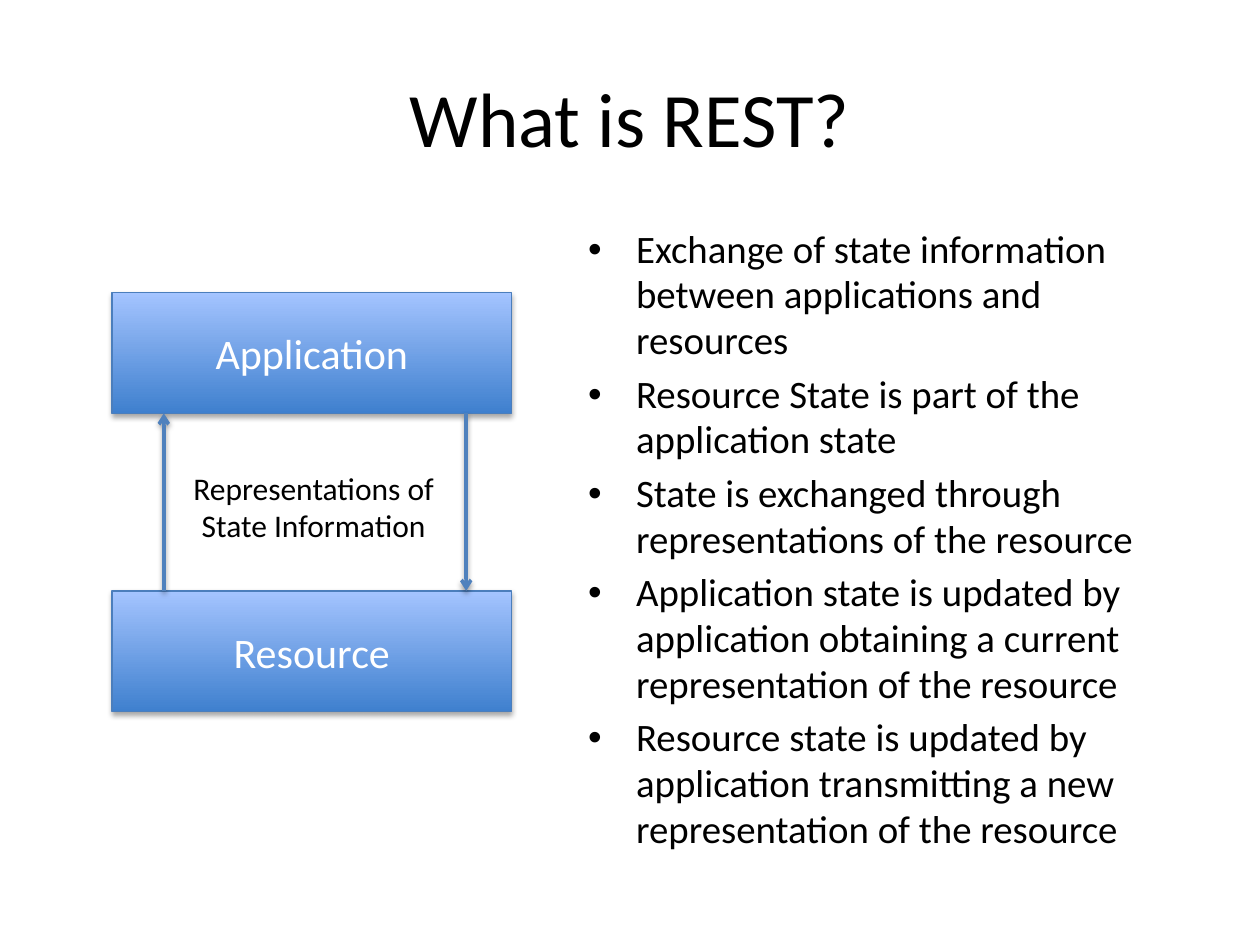
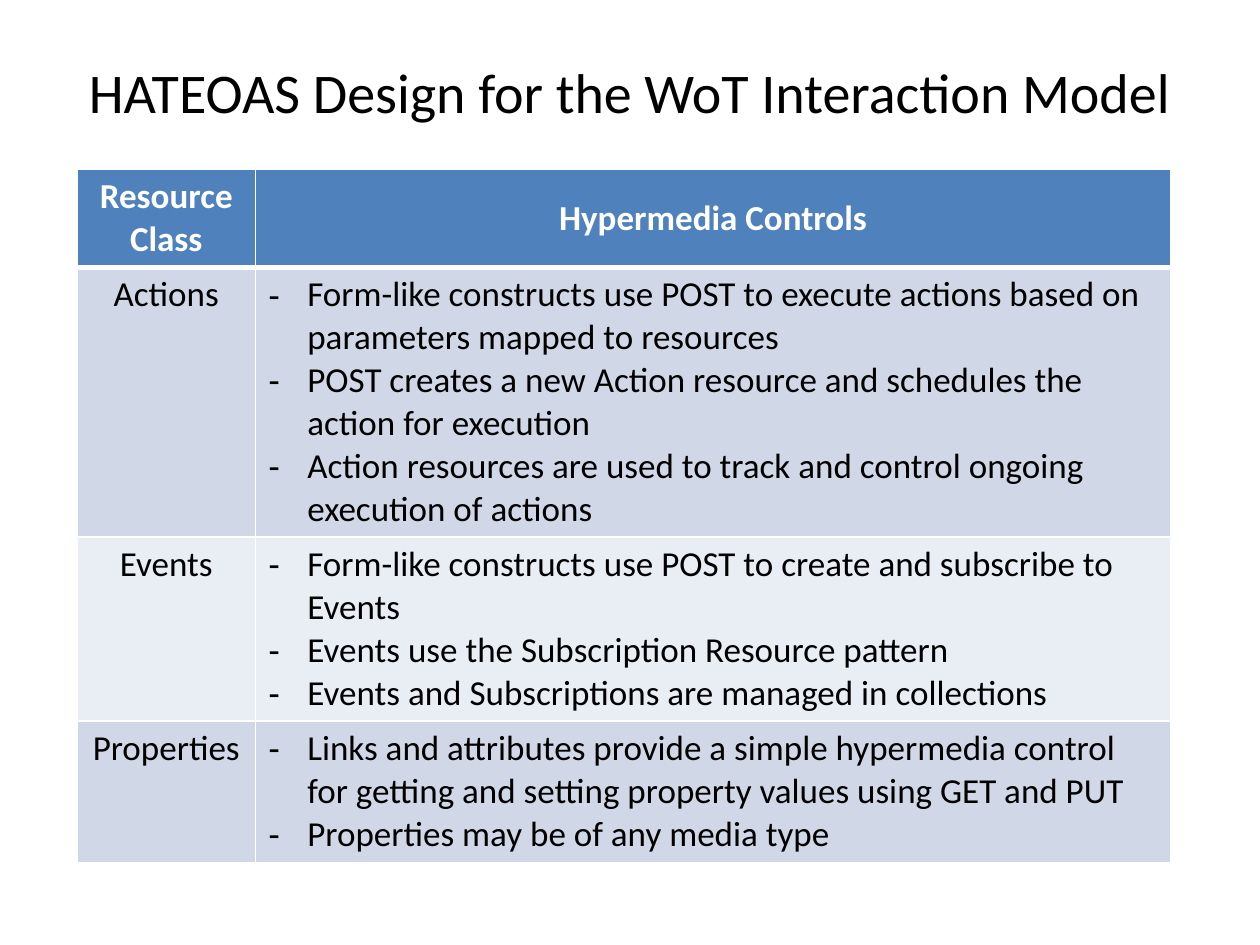
from lxml import etree
from pptx import Presentation
from pptx import util as u
from pptx.dml.color import RGBColor
from pptx.enum import shapes, text
from pptx.oxml import parse_xml
from pptx.oxml.ns import nsdecls, qn

THEME = {
    "font": "Calibri", "black": "000000", "white": "FFFFFF",
    "accent": "4F81BD", "box_line": "4B7EBC", "box_grad": ("3F80CE", "A4C4FF"),
    "bands": ("D0D8E8", "E9EDF4"),
    "title": 44, "table_title": 32, "body": 22.2, "box": 24, "label": 18, "cell": 20,
}
CENTER, LEFT = text.PP_ALIGN.CENTER, text.PP_ALIGN.LEFT
MIDDLE, TOP = text.MSO_ANCHOR.MIDDLE, text.MSO_ANCHOR.TOP


def write(tf, lines, size, color="black", bold=False, align=CENTER,
          bullet=None, indent=0, **spacing):
    """Fill a text frame, one paragraph per line, with optional bullets."""
    tf.word_wrap = True
    for i, line in enumerate(lines):
        p = tf.paragraphs[0] if i == 0 else tf.add_paragraph()
        for name, value in {"alignment": align, **spacing}.items():
            setattr(p, name, value)
        r = p.add_run()
        r.text = line
        fmt = {"name": THEME["font"], "size": u.Pt(THEME[size]), "bold": bold}
        for name, value in fmt.items():
            setattr(r.font, name, value)
        r.font.color.rgb = RGBColor.from_string(THEME[color])
        if bullet:
            pPr = p._p.get_or_add_pPr()
            pPr.set("marL", str(u.Inches(indent)))
            pPr.set("indent", str(-u.Inches(indent)))
            etree.SubElement(pPr, qn("a:buFont"), typeface="Arial")
            etree.SubElement(pPr, qn("a:buChar"), char=bullet)


def add_shadow(sp, distance, alpha):
    """Give a shape or connector a soft shadow straight below it."""
    sp._element.spPr.append(parse_xml(
        f'<a:effectLst {nsdecls("a")}><a:outerShdw blurRad="{u.Pt(3.1)}" '
        f'dist="{u.Pt(distance)}" dir="5400000" rotWithShape="0">'
        f'<a:srgbClr val="{THEME["black"]}"><a:alpha val="{alpha * 1000}"/>'
        '</a:srgbClr></a:outerShdw></a:effectLst>'))


prs = Presentation()
prs.slide_width, prs.slide_height = u.Inches(10), u.Inches(7.5)

# Slides and their titles
slides = []
for title, top, size in (
    ("What is REST?", 0.3, "title"),
    ("HATEOAS Design for the WoT Interaction Model", 0.1, "table_title"),
):
    s = prs.slides.add_slide(prs.slide_layouts[5])
    sp = s.shapes.title
    place = {"left": 0.5, "top": top, "width": 9, "height": 1.25}
    for name, value in place.items():
        setattr(sp, name, u.Inches(value))
    sp.text_frame.vertical_anchor = MIDDLE
    write(sp.text_frame, [title], size)
    slides.append(s)
rest, hateoas = slides

# REST: bullet list
sp = rest.shapes.add_textbox(*map(u.Inches, (4.57, 1.75, 4.81, 4.95)))
write(sp.text_frame, [
    "Exchange of state information between applications and resources",
    "Resource State is part of the application state",
    "State is exchanged through representations of the resource",
    "Application state is updated by application obtaining a current "
    "representation of the resource",
    "Resource state is updated by application transmitting a new "
    "representation of the resource",
], "body", align=LEFT, bullet="•", indent=0.38,
    space_before=u.Pt(4.5), line_spacing=0.98)

# REST: application and resource boxes
app_top, resource_top, box_height = 2.32, 4.69, 0.96
for name, top in (("Application", app_top), ("Resource", resource_top)):
    sp = rest.shapes.add_shape(shapes.MSO_SHAPE.RECTANGLE,
                               *map(u.Inches, (0.89, top, 3.17, box_height)))
    sp.fill.gradient()
    sp.fill.gradient_angle = 90
    for stop, color in zip(sp.fill.gradient_stops, THEME["box_grad"]):
        stop.color.rgb = RGBColor.from_string(color)
    sp.line.color.rgb = RGBColor.from_string(THEME["box_line"])
    sp.line.width = u.Pt(0.75)
    add_shadow(sp, 1.8, 35)
    sp.text_frame.vertical_anchor = MIDDLE
    write(sp.text_frame, [name], "box", "white")

# REST: arrows up and down between the boxes
app_bottom = app_top + box_height
for x, start, end in ((1.3, resource_top, app_bottom), (3.7, app_bottom, resource_top)):
    arrow = rest.shapes.add_connector(shapes.MSO_CONNECTOR.STRAIGHT,
                                      *map(u.Inches, (x, start, x, end)))
    arrow.line.color.rgb = RGBColor.from_string(THEME["accent"])
    arrow.line.width = u.Pt(2)
    etree.SubElement(arrow.line._get_or_add_ln(), qn("a:tailEnd"), type="arrow")
    add_shadow(arrow, 1.6, 38)

sp = rest.shapes.add_textbox(*map(u.Inches, (1.31, 3.67, 2.36, 0.71)))
write(sp.text_frame, ["Representations of State Information"], "label")

# HATEOAS: table of controls by resource class
rows = [
    ("Resource Class", ["Hypermedia Controls"]),
    ("Actions", [
        "Form-like constructs use POST to execute actions based on "
        "parameters mapped to resources",
        "POST creates a new Action resource and schedules the action for execution",
        "Action resources are used to track and control ongoing execution of actions",
    ]),
    ("Events", [
        "Form-like constructs use POST to create and subscribe to Events",
        "Events use the Subscription Resource pattern",
        "Events and Subscriptions are managed in collections",
    ]),
    ("Properties", [
        "Links and attributes provide a simple hypermedia control for getting "
        "and setting property values using GET and PUT",
        "Properties may be of any media type",
    ]),
]
col_widths, row_heights = (1.42, 7.26), (0.77, 2.14, 1.46, 1.12)
table = hateoas.shapes.add_table(
    len(rows), len(col_widths),
    *map(u.Inches, (0.61, 1.34, sum(col_widths), sum(row_heights)))).table
for col, width in zip(table.columns, col_widths):
    col.width = u.Inches(width)

for i, (resource_class, controls) in enumerate(rows):
    table.rows[i].height = u.Inches(row_heights[i])
    header = i == 0
    fill = THEME["accent"] if header else THEME["bands"][(i - 1) % 2]
    for j, lines in enumerate(([resource_class], controls)):
        cell = table.cell(i, j)
        cell.fill.solid()
        cell.fill.fore_color.rgb = RGBColor.from_string(fill)
        cell.vertical_anchor = MIDDLE if header else TOP
        if header:
            write(cell.text_frame, lines, "cell", "white", bold=True)
        elif j == 0:
            write(cell.text_frame, lines, "cell")
        else:
            write(cell.text_frame, lines, "cell", align=LEFT, bullet="-", indent=0.31)

        # White rules, thick between the header and the body
        tcPr = cell._tc.get_or_add_tcPr()
        for k, side in enumerate("LRTB"):
            thick = (i, side) in ((0, "B"), (1, "T"))
            tcPr.insert(k, parse_xml(
                f'<a:ln{side} {nsdecls("a")} w="{u.Pt(3 if thick else 1)}"><a:solidFill>'
                f'<a:srgbClr val="{THEME["white"]}"/></a:solidFill></a:ln{side}>'))

prs.save("out.pptx")
